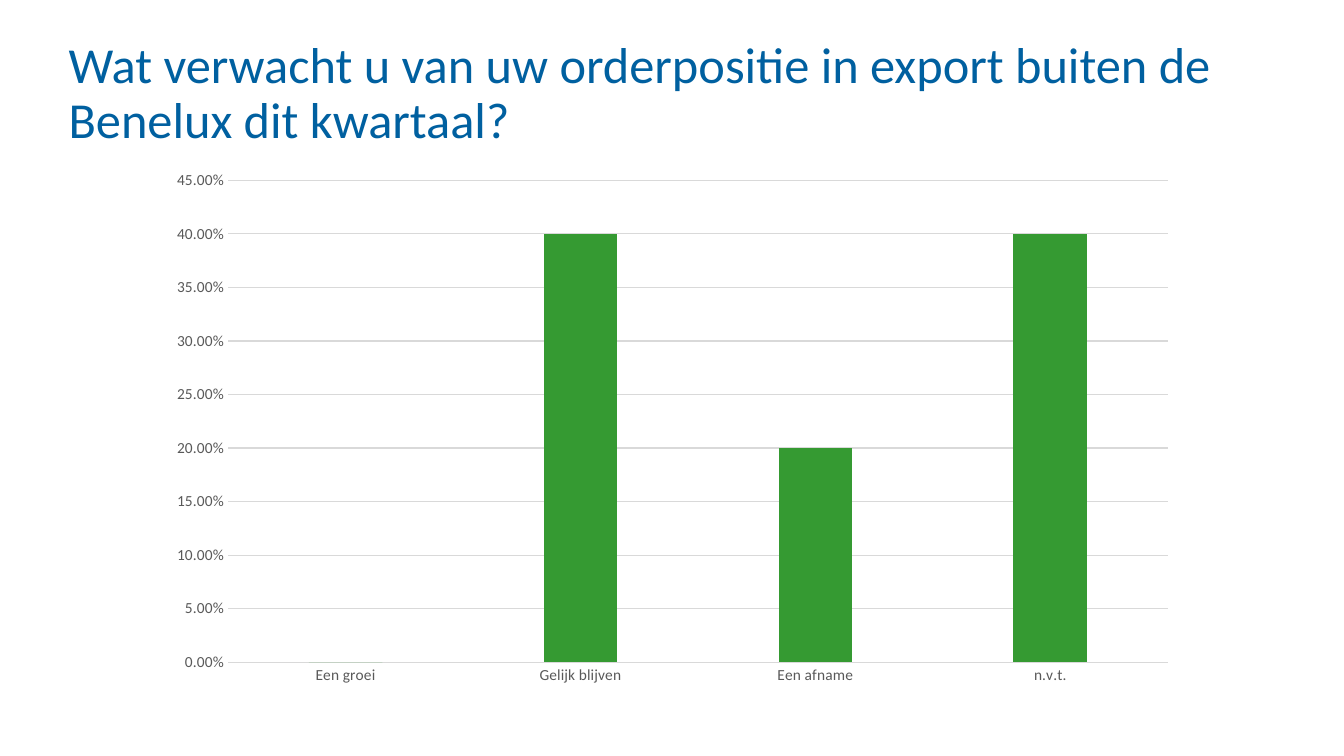
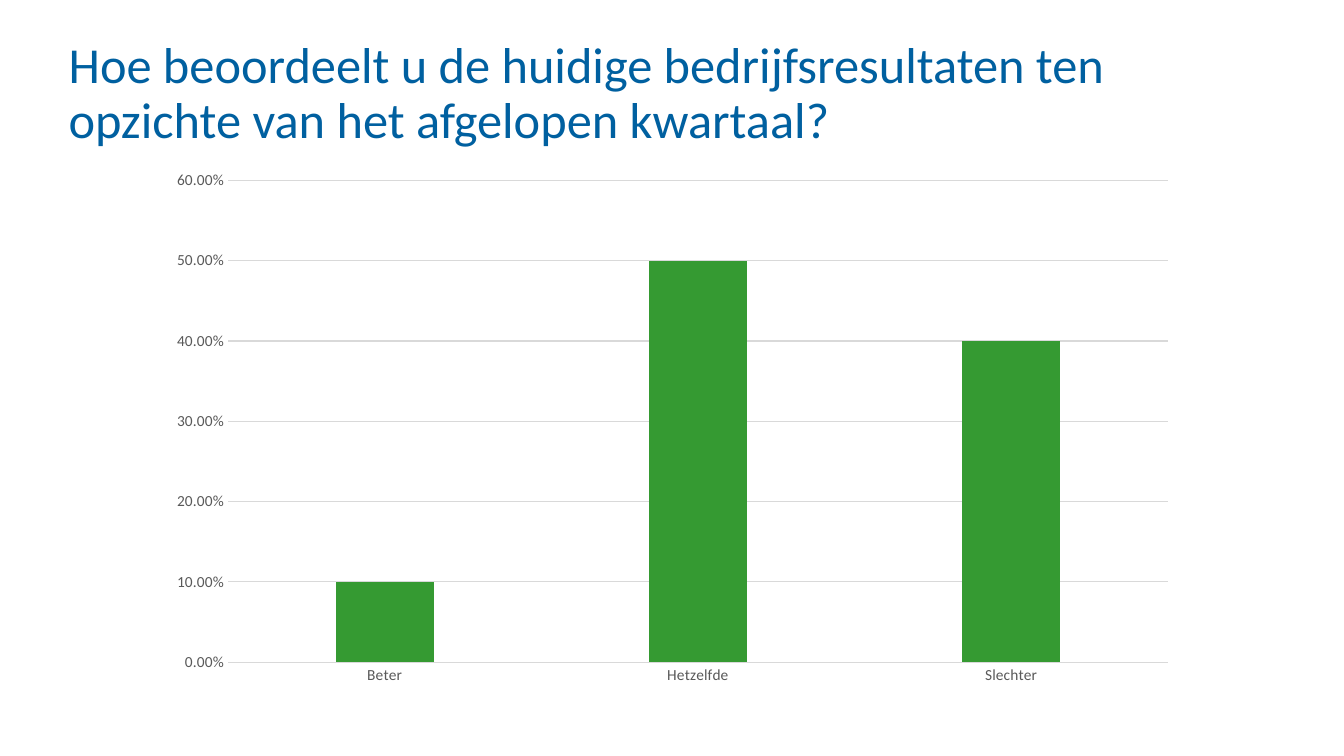
from pptx import Presentation
from pptx.chart.data import CategoryChartData
from pptx.dml.color import RGBColor
from pptx.enum.chart import XL_CHART_TYPE, XL_TICK_MARK
from pptx.enum.text import MSO_ANCHOR
from pptx.util import Cm, Pt

COLUMN = XL_CHART_TYPE.COLUMN_CLUSTERED
NO_TICK = XL_TICK_MARK.NONE
TOP = MSO_ANCHOR.TOP

THEME = {
    "font": "Calibri",
    "title": RGBColor(0x00, 0x60, 0xA0),
    "bar": RGBColor(0x35, 0x9A, 0x32),
    "label": RGBColor(0x59, 0x59, 0x59),
    "grid": RGBColor(0xD9, 0xD9, 0xD9),
    "title_size": Pt(36),
    "label_size": Pt(11),
    "rule": Pt(0.75),
    "percent": "0.00%",
}
TITLE_BOX = Cm(1.73), Cm(1.02), Cm(30.34), Cm(1.93)
CHART_BOX = Cm(3.94), Cm(4.04), Cm(26.01), Cm(13.49)
FRAME = {
    "word_wrap": True, "vertical_anchor": TOP, "margin_left": 0,
    "margin_top": 0, "margin_right": 0, "margin_bottom": 0,
}

SLIDES = [
    {
        "title": "Wat verwacht u van uw orderpositie in export buiten de "
                 "Benelux dit kwartaal?",
        "votes": {"Een groei": 0, "Gelijk blijven": 0.4,
                  "Een afname": 0.2, "n.v.t.": 0.4},
        "scale": {"minimum_scale": 0, "maximum_scale": 0.45, "major_unit": 0.05},
    },
    {
        "title": "Hoe beoordeelt u de huidige bedrijfsresultaten ten "
                 "opzichte van het afgelopen kwartaal?",
        "votes": {"Beter": 0.1, "Hetzelfde": 0.5, "Slechter": 0.4},
        "scale": {"minimum_scale": 0, "maximum_scale": 0.6, "major_unit": 0.1},
    },
]


def assign(target, values):
    """Set each named attribute of the target."""
    for name, value in values.items():
        setattr(target, name, value)


def style(font, kind):
    assign(font, {"name": THEME["font"], "size": THEME[kind + "_size"]})
    font.color.rgb = THEME[kind]


deck = Presentation()
assign(deck, {"slide_width": Cm(33.87), "slide_height": Cm(19.05)})
blank = deck.slide_layouts[6]

for page in SLIDES:
    slide = deck.slides.add_slide(blank)

    frame = slide.shapes.add_textbox(*TITLE_BOX).text_frame
    assign(frame, FRAME)
    title = frame.paragraphs[0]
    title.text = page["title"]
    title.line_spacing = 0.9
    style(title.runs[0].font, "title")

    data = CategoryChartData(number_format=THEME["percent"])
    data.categories = page["votes"].keys()
    data.add_series("Series 1", page["votes"].values())
    chart = slide.shapes.add_chart(COLUMN, *CHART_BOX, data).chart
    assign(chart, {"has_legend": False, "has_title": False})
    style(chart.font, "label")

    plot = chart.plots[0]
    assign(plot, {"gap_width": 219, "overlap": -27, "vary_by_categories": False})
    fill = plot.series[0].format.fill
    fill.solid()
    fill.fore_color.rgb = THEME["bar"]

    base, scale = chart.category_axis, chart.value_axis
    for axis in (base, scale):
        assign(axis, {"major_tick_mark": NO_TICK, "minor_tick_mark": NO_TICK})
        style(axis.tick_labels.font, "label")
    assign(scale, page["scale"])
    assign(scale.tick_labels, {"number_format": THEME["percent"],
                               "number_format_is_linked": False})
    scale.format.line.fill.background()
    for line in (base.format.line, scale.major_gridlines.format.line):
        line.width = THEME["rule"]
        line.color.rgb = THEME["grid"]

deck.save("out.pptx")
